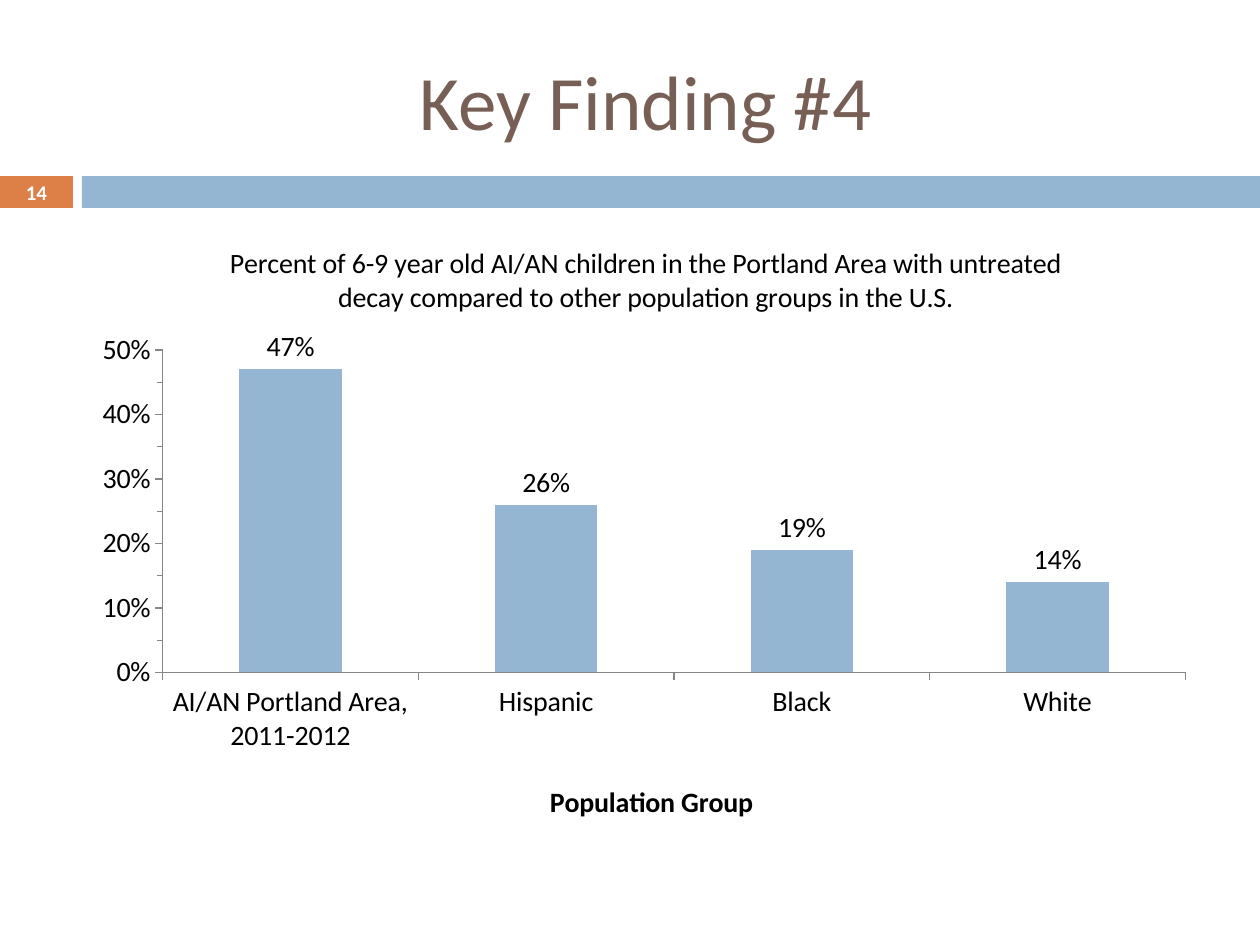
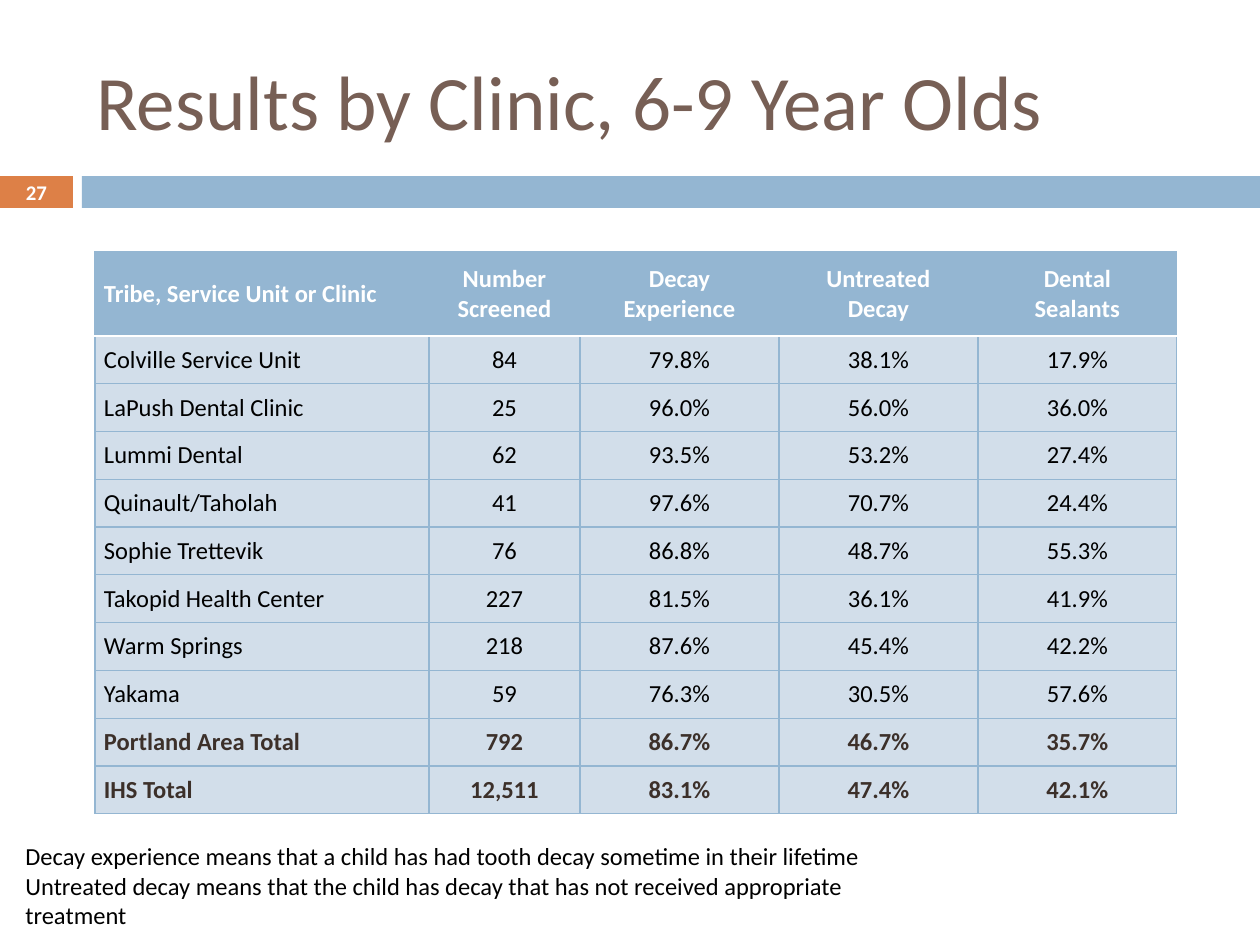
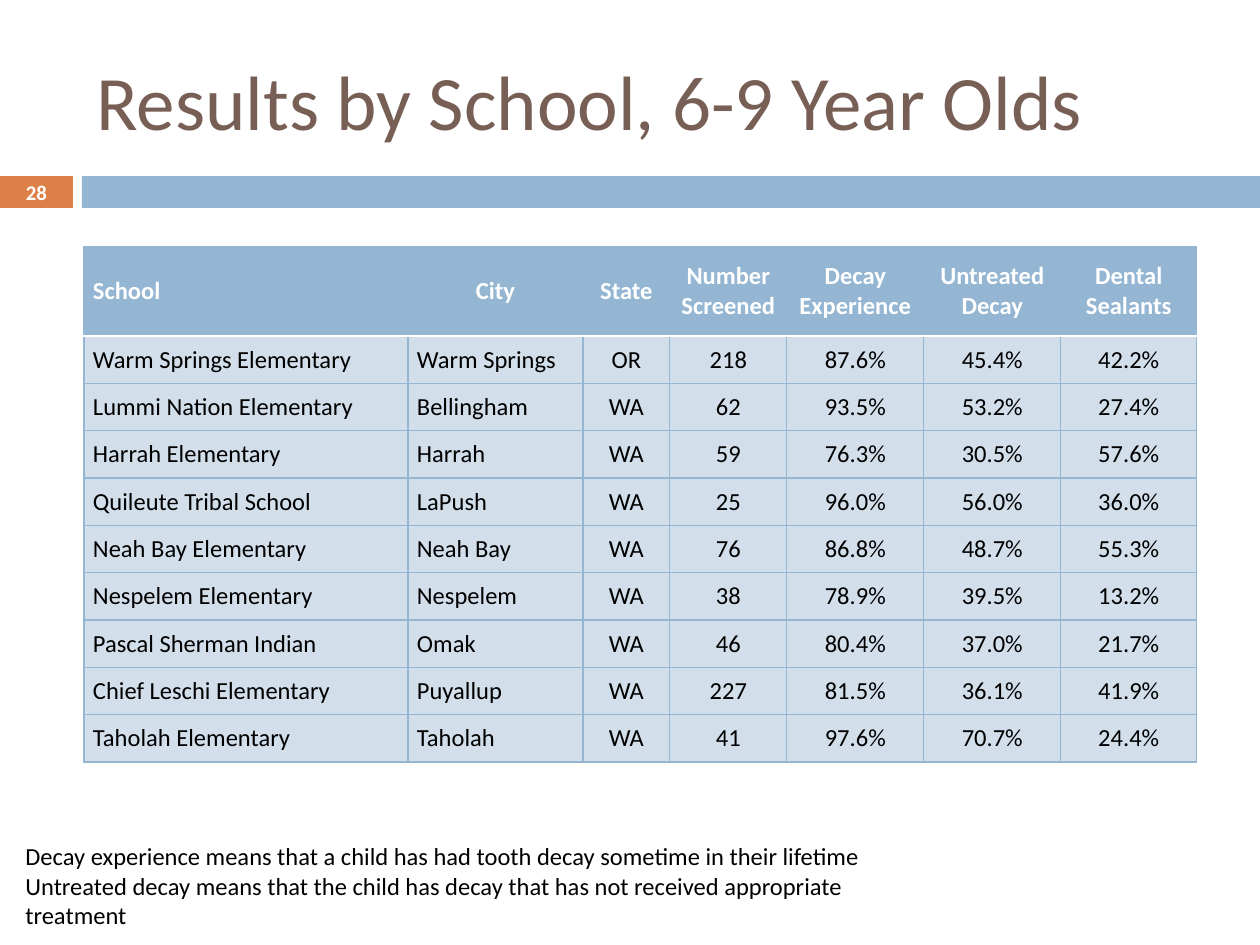
import pptx
import pptx.chart.data
import pptx.dml.color
import pptx.enum.chart
import pptx.enum.shapes
import pptx.enum.text
import pptx.oxml
import pptx.oxml.ns
import pptx.util

PX = 914400 / 126
FONT = "Calibri"
COLORS = {
    "white": "FFFFFF", "black": "000000", "title": "775F55",
    "orange": "DD8047", "blue": "94B6D2", "pale": "D2DEEA",
    "total": "3C302A", "axis": "868686",
}
ALIGN = pptx.enum.text.PP_ALIGN
ANCHOR = pptx.enum.text.MSO_ANCHOR
LEFT, CENTER = ALIGN.LEFT, ALIGN.CENTER

# Boxes are left, top, width, height in px
TITLE_BOX = (84, 32, 1124, 136)
BAND_BOX = (0, 176, 1260, 32)
CHART_BOX = (84, 220, 1124, 620)
NOTE_BOX = (13, 835, 944, 72)

CHART_TITLE = ("Percent of 6-9 year old AI/AN children in the Portland Area with "
               "untreated decay compared to other population groups in the U.S.")
GROUPS = {"AI/AN Portland Area, 2011-2012": 0.47, "Hispanic": 0.26,
          "Black": 0.19, "White": 0.14}
NOTES = [
    "Decay experience means that a child has had tooth decay sometime in their lifetime",
    "Untreated decay means that the child has decay that has not received "
    "appropriate treatment",
]

MEASURES = ["Number\nScreened", "Decay\nExperience", "Untreated\nDecay", "Dental\nSealants"]
CLINICS = [
    ["Tribe, Service Unit or Clinic"] + MEASURES,
    ["Colville Service Unit", "84", "79.8%", "38.1%", "17.9%"],
    ["LaPush Dental Clinic", "25", "96.0%", "56.0%", "36.0%"],
    ["Lummi Dental", "62", "93.5%", "53.2%", "27.4%"],
    ["Quinault/Taholah", "41", "97.6%", "70.7%", "24.4%"],
    ["Sophie Trettevik", "76", "86.8%", "48.7%", "55.3%"],
    ["Takopid Health Center", "227", "81.5%", "36.1%", "41.9%"],
    ["Warm Springs", "218", "87.6%", "45.4%", "42.2%"],
    ["Yakama", "59", "76.3%", "30.5%", "57.6%"],
    ["Portland Area Total", "792", "86.7%", "46.7%", "35.7%"],
    ["IHS Total", "12,511", "83.1%", "47.4%", "42.1%"],
]
SCHOOLS = [
    ["School", "City", "State", "Number Screened"] + MEASURES[1:],
    ["Warm Springs Elementary", "Warm Springs", "OR", "218", "87.6%", "45.4%", "42.2%"],
    ["Lummi Nation Elementary", "Bellingham", "WA", "62", "93.5%", "53.2%", "27.4%"],
    ["Harrah Elementary", "Harrah", "WA", "59", "76.3%", "30.5%", "57.6%"],
    ["Quileute Tribal School", "LaPush", "WA", "25", "96.0%", "56.0%", "36.0%"],
    ["Neah Bay Elementary", "Neah Bay", "WA", "76", "86.8%", "48.7%", "55.3%"],
    ["Nespelem Elementary", "Nespelem", "WA", "38", "78.9%", "39.5%", "13.2%"],
    ["Pascal Sherman Indian", "Omak", "WA", "46", "80.4%", "37.0%", "21.7%"],
    ["Chief Leschi Elementary", "Puyallup", "WA", "227", "81.5%", "36.1%", "41.9%"],
    ["Taholah Elementary", "Taholah", "WA", "41", "97.6%", "70.7%", "24.4%"],
]


def px(n):
    return pptx.util.Emu(round(n * PX))


def emu(box):
    return [px(n) for n in box]


def rgb(name):
    return pptx.dml.color.RGBColor.from_string(COLORS[name])


def apply(obj, values):
    for name, value in values.items():
        setattr(obj, name, value)


def style_font(font, size, color="black", bold=False):
    apply(font, {"name": FONT, "size": pptx.util.Pt(size), "bold": bold})
    font.color.rgb = rgb(color)


def write(tf, lines, size, color="black", bold=False, align=LEFT):
    for i, line in enumerate(lines):
        p = tf.paragraphs[0] if i == 0 else tf.add_paragraph()
        p.alignment = align
        r = p.add_run()
        r.text = line
        style_font(r.font, size, color, bold)


def add_text(s, box, lines, size, color="black", bold=False, align=LEFT, **frame):
    tf = s.shapes.add_textbox(*emu(box)).text_frame
    apply(tf, {"word_wrap": True, **frame})
    write(tf, lines, size, color, bold, align)


def add_rect(s, box, color):
    sp = s.shapes.add_shape(pptx.enum.shapes.MSO_SHAPE.RECTANGLE, *emu(box))
    sp.shadow.inherit = False
    sp.fill.solid()
    sp.fill.fore_color.rgb = rgb(color)
    sp.line.fill.background()


# Band with the slide number at its left end
def add_band(s, box, number):
    x, y, w, h = box
    tab, gap = 73, 9
    add_rect(s, (x, y, tab, h), "orange")
    add_rect(s, (x + tab + gap, y, w - tab - gap, h), "blue")
    add_text(s, (x, y - 1, tab, h + 2), [number], 11.9, "white", True, CENTER,
             vertical_anchor=ANCHOR.MIDDLE, margin_left=0, margin_right=0,
             margin_top=0, margin_bottom=0)


def new_slide(prs, title, number, align=LEFT):
    s = prs.slides.add_slide(prs.slide_layouts[6])
    add_band(s, BAND_BOX, number)
    add_text(s, TITLE_BOX, [title], 44, "title", align=align,
             vertical_anchor=ANCHOR.MIDDLE)
    return s


def set_layout(parent, after, inner=False, **fractions):
    target = '<c:layoutTarget val="inner"/>' if inner else ""
    modes = '<c:xMode val="edge"/><c:yMode val="edge"/>'
    values = "".join(f'<c:{k} val="{v}"/>' for k, v in fractions.items())
    layout = pptx.oxml.parse_xml(
        f'<c:layout {pptx.oxml.ns.nsdecls("c")}><c:manualLayout>'
        f"{target}{modes}{values}</c:manualLayout></c:layout>")
    for old in parent.findall(pptx.oxml.ns.qn("c:layout")):
        parent.remove(old)
    if after is None:
        parent.insert(0, layout)
    else:
        after.addnext(layout)


# Column chart of the population groups
def add_group_chart(s, box):
    xl = pptx.enum.chart
    data = pptx.chart.data.CategoryChartData(number_format="0%")
    data.categories = list(GROUPS)
    data.add_series("Series 1", list(GROUPS.values()))
    chart = s.shapes.add_chart(xl.XL_CHART_TYPE.COLUMN_CLUSTERED, *emu(box), data).chart
    style_font(chart.font, 14)
    chart.has_legend = False
    chart.has_title = True
    write(chart.chart_title.text_frame, [CHART_TITLE], 16, align=CENTER)
    chart.chart_title.include_in_layout = False

    plot = chart.plots[0]
    apply(plot, {"gap_width": 150, "vary_by_categories": False, "has_data_labels": True})
    apply(plot.data_labels, {"show_value": True, "number_format": "0%",
                             "number_format_is_linked": False,
                             "position": xl.XL_LABEL_POSITION.OUTSIDE_END})
    style_font(plot.data_labels.font, 16)
    fill = plot.series[0].format.fill
    fill.solid()
    fill.fore_color.rgb = rgb("blue")

    # Axes
    out, none = xl.XL_TICK_MARK.OUTSIDE, xl.XL_TICK_MARK.NONE
    cat, val = chart.category_axis, chart.value_axis
    for axis, minor in ((cat, none), (val, out)):
        apply(axis, {"major_tick_mark": out, "minor_tick_mark": minor,
                     "has_major_gridlines": False})
        style_font(axis.tick_labels.font, 16)
        axis.format.line.color.rgb = rgb("axis")
    apply(val, {"minimum_scale": 0, "maximum_scale": 0.5, "major_unit": 0.1,
                "minor_unit": 0.05})
    apply(val.tick_labels, {"number_format": "0%", "number_format_is_linked": False})
    cat.has_title = True
    title = cat.axis_title
    write(title.text_frame, ["Population Group"], 16, bold=True, align=CENTER)
    title_xml = title._element
    set_layout(title_xml, title_xml.find(pptx.oxml.ns.qn("c:tx")), x=0.41, y=0.9)
    set_layout(chart._chartSpace.chart.plotArea, None, inner=True,
               x=0.07, y=0.21, w=0.91, h=0.52)


def set_borders(cell, **colors):
    tc_pr = cell._tc.get_or_add_tcPr()
    for i, side in enumerate("LRTB"):
        color = colors.get(side, "blue")
        width = pptx.util.Pt(0.79 if color == "blue" else 1.5)
        tc_pr.insert(i, pptx.oxml.parse_xml(
            f'<a:ln{side} {pptx.oxml.ns.nsdecls("a")} w="{width}"><a:solidFill>'
            f'<a:srgbClr val="{COLORS[color]}"/></a:solidFill></a:ln{side}>'))


# Table of results; the first text_cols columns and the first heading are left aligned
def add_results(s, box, rows, widths, header_h, text_cols, total_rows=0):
    table = s.shapes.add_table(len(rows), len(widths), *emu(box)).table
    table.horz_banding = False
    for col, w in zip(table.columns, widths):
        col.width = px(w)
    body_h = (box[3] - header_h) / (len(rows) - 1)
    for i, row in enumerate(rows):
        table.rows[i].height = px(header_h if i == 0 else body_h)
        header, total = i == 0, i >= len(rows) - total_rows
        color = "white" if header else "total" if total else "black"
        edges = {0: {"B": "white"}, 1: {"T": "white"}}.get(i, {})
        for j, text in enumerate(row):
            cell = table.cell(i, j)
            apply(cell, {"vertical_anchor": ANCHOR.MIDDLE, "margin_left": px(9),
                         "margin_right": px(9), "margin_top": 0, "margin_bottom": 0})
            cell.fill.solid()
            cell.fill.fore_color.rgb = rgb("blue" if header else "pale")
            set_borders(cell, **edges)
            is_left = j < (1 if header else text_cols)
            write(cell.text_frame, text.split("\n"), 14, color, header or total,
                  LEFT if is_left else CENTER)


def results_slide(prs, title, number, box, **table):
    s = new_slide(prs, title, number)
    add_results(s, box, **table)
    add_text(s, NOTE_BOX, NOTES, 14)


def main():
    prs = pptx.Presentation()
    prs.slide_width, prs.slide_height = px(1260), px(945)

    s = new_slide(prs, "Key Finding #4", "14", CENTER)
    add_group_chart(s, CHART_BOX)

    results_slide(prs, "Results by Clinic, 6-9 Year Olds", "27", (95, 252, 1082, 562),
                  rows=CLINICS, widths=[334, 151, 199, 199, 199], header_h=84,
                  text_cols=1, total_rows=2)
    results_slide(prs, "Results by School, 6-9 Year Olds", "28", (84, 247, 1113, 515),
                  rows=SCHOOLS, widths=[324, 175, 87, 117, 137, 137, 136], header_h=89,
                  text_cols=2)
    prs.save("out.pptx")


if __name__ == "__main__":
    main()
